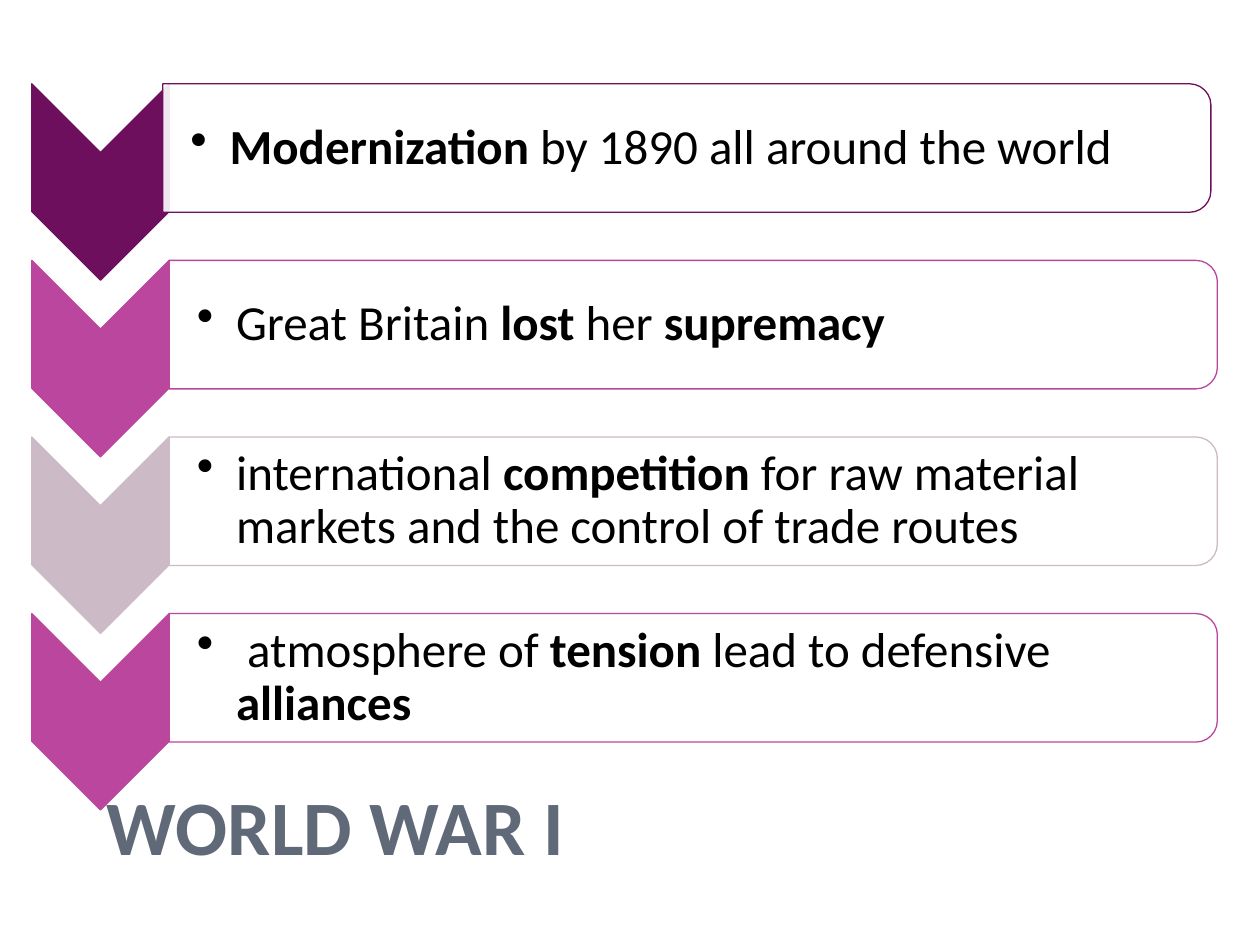
from lxml import etree
from pptx import Presentation
from pptx.dml.color import RGBColor
from pptx.enum.shapes import MSO_SHAPE
from pptx.enum.text import MSO_ANCHOR, PP_ALIGN
from pptx.oxml.ns import qn
from pptx.util import Cm, Pt

CHEVRON = MSO_SHAPE.CHEVRON
PANEL = MSO_SHAPE.ROUND_2_SAME_RECTANGLE
MIDDLE = MSO_ANCHOR.MIDDLE
CENTER = PP_ALIGN.CENTER

PLUM = RGBColor(0x6D, 0x0F, 0x5C)
PINK = RGBColor(0xBB, 0x46, 0x9E)
MAUVE = RGBColor(0xCD, 0xBA, 0xC7)
SLATE = RGBColor(0x60, 0x69, 0x77)
BLACK = RGBColor(0, 0, 0)
WHITE = RGBColor(255, 255, 255)
FONT = "Calibri"

# Each row: colour, panel shift in cm, runs of (text, bold)
ROWS = [
    (PLUM, -0.13, [("Modernization ", True),
                   ("by 1890 all around the world", False)]),
    (PINK, 0, [("Great Britain ", False), ("lost", True),
               (" her ", False), ("supremacy", True)]),
    (MAUVE, 0, [("international ", False), ("competition", True),
                (" for raw material markets and the control of trade routes", False)]),
    (PINK, 0, [(" atmosphere of ", False), ("tension", True),
               (" lead to defensive ", False), ("alliances", True)]),
]
STEP = 3.56


def add_run(para, text, size, color, bold):
    run = para.add_run()
    run.text = text
    font = run.font
    font.name, font.size, font.bold = FONT, Pt(size), bold
    font.color.rgb = color


def add_turned(slide, kind, left, top, width, height, fill, line):
    """Add a shape turned by 90 degrees that covers the given box."""
    shape = slide.shapes.add_shape(
        kind, Cm(left + (width - height) / 2), Cm(top + (height - width) / 2),
        Cm(height), Cm(width))
    shape.rotation = 90
    shape.shadow.inherit = False
    shape.fill.solid()
    shape.fill.fore_color.rgb = fill
    shape.line.color.rgb = line
    shape.line.width = Pt(0.75)
    return shape


def add_text(slide, left, top, width, height):
    frame = slide.shapes.add_textbox(
        Cm(left), Cm(top), Cm(width), Cm(height)).text_frame
    frame.word_wrap = True
    frame.vertical_anchor = MIDDLE
    return frame


def add_title(slide, left, top, width, height):
    para = add_text(slide, left, top, width, height).paragraphs[0]
    para.alignment = CENTER
    add_run(para, "WORLD WAR I", 44, SLATE, True)


def add_row(slide, left, top, color, shift, runs):
    # Chevron
    add_turned(slide, CHEVRON, left, top, 2.77, 3.96, color, color)

    # Panel with a slightly clear fill
    start = left + 2.77 + shift
    panel = add_turned(slide, PANEL, start, top, 21.13, 2.59, WHITE, color)
    tint = panel.fill._xPr.find(qn("a:solidFill"))[0]
    etree.SubElement(tint, qn("a:alpha")).set("val", "90000")

    # Bulleted text
    frame = add_text(slide, start, top + 0.13, 21, 2.34)
    frame.margin_left = Cm(0.56)
    frame.margin_right = frame.margin_top = frame.margin_bottom = Cm(0.05)
    para = frame.paragraphs[0]
    props = para._p.get_or_add_pPr()
    props.set("marL", str(Cm(0.79)))
    props.set("indent", str(-Cm(0.79)))
    etree.SubElement(props, qn("a:buChar")).set("char", "•")
    para.line_spacing = 0.9
    for text, bold in runs:
        add_run(para, text, 28, BLACK, bold)


def add_list(slide, left, top):
    for i, (color, shift, runs) in enumerate(ROWS):
        add_row(slide, left, top + i * STEP, color, shift, runs)


def main():
    deck = Presentation()
    deck.slide_width, deck.slide_height = Cm(25.4), Cm(19.05)
    slide = deck.slides.add_slide(deck.slide_layouts[6])
    add_title(slide, 0.2, 15.04, 13.13, 3.18)
    add_list(slide, 0.64, 1.69)
    deck.save("out.pptx")


if __name__ == "__main__":
    main()
